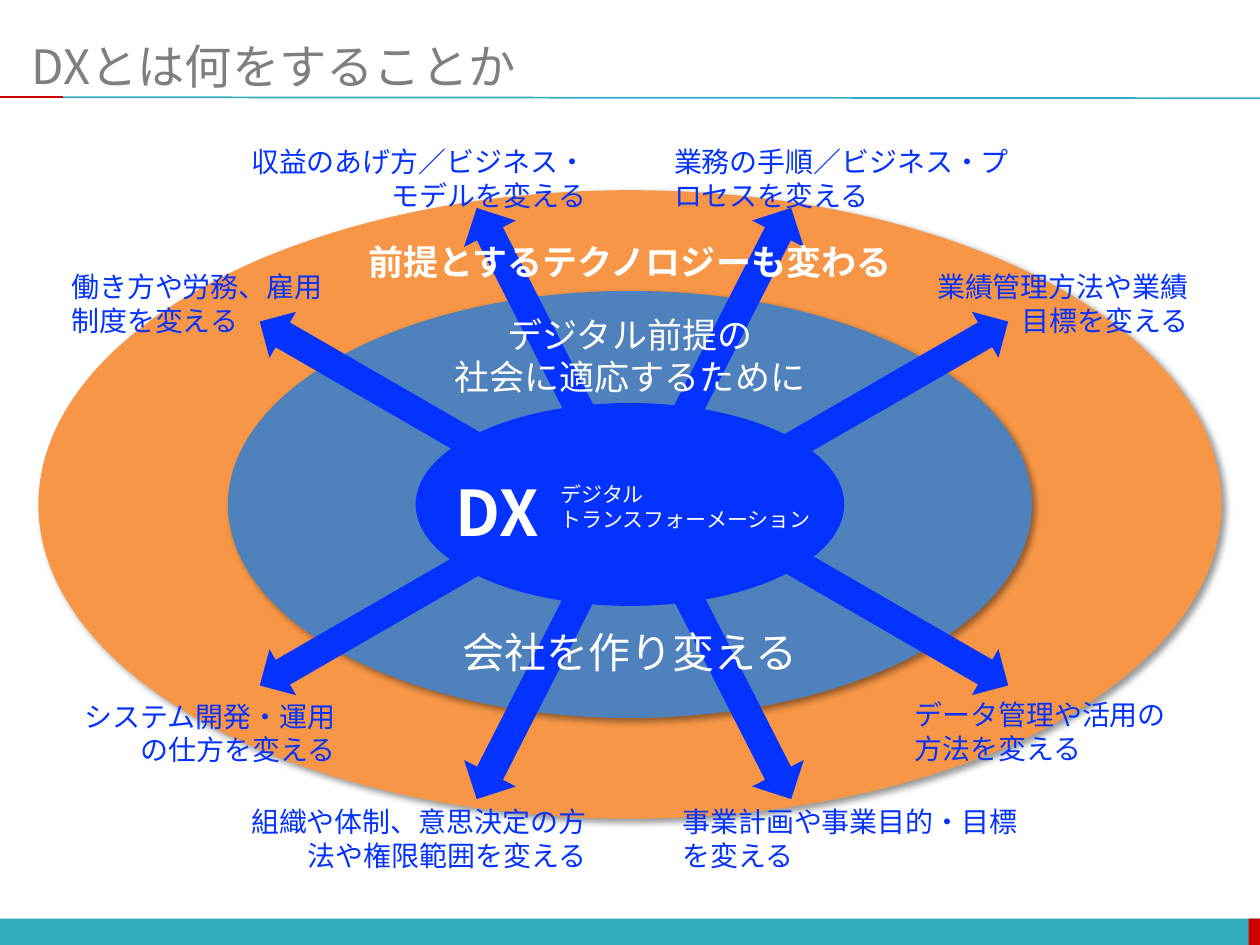
from lxml import etree
from pptx import Presentation
from pptx.dml.color import RGBColor
from pptx.enum.shapes import MSO_CONNECTOR, MSO_SHAPE
from pptx.enum.text import MSO_ANCHOR, MSO_AUTO_SIZE, PP_ALIGN
from pptx.oxml.ns import qn
from pptx.util import Cm, Pt

RECTANGLE, OVAL, UP_ARROW = MSO_SHAPE.RECTANGLE, MSO_SHAPE.OVAL, MSO_SHAPE.UP_ARROW
STRAIGHT = MSO_CONNECTOR.STRAIGHT
LEFT, CENTER, RIGHT = PP_ALIGN.LEFT, PP_ALIGN.CENTER, PP_ALIGN.RIGHT
MIDDLE = MSO_ANCHOR.MIDDLE
FIT_SHAPE, NO_FIT = MSO_AUTO_SIZE.SHAPE_TO_FIT_TEXT, MSO_AUTO_SIZE.NONE
TEAL, RED, GRAY, WHITE = "33ACBD", "CC0000", "7F7F7F", "FFFFFF"
ORANGE, STEEL, BLUE = "F79646", "4F81BD", "0432FF"
FONT = "Noto Sans CJK JP"
WIDTH, HEIGHT = 25.4, 19.05


def color(value):
    return RGBColor.from_string(value)


class SlideBuilder:
    def __init__(self, slide):
        self.slide = slide

    def fill_frame(self, frame, lines, size, fill, align=LEFT, bold=False):
        for index, line in enumerate(lines):
            paragraph = frame.paragraphs[0] if index == 0 else frame.add_paragraph()
            paragraph.alignment = align
            run = paragraph.add_run()
            run.text = line
            run.font.size = Pt(size)
            run.font.bold = bold
            run.font.color.rgb = color(fill)
            run.font.name = FONT
            etree.SubElement(run.font._element, qn("a:ea"), typeface=FONT)

    def title(self, text, left, top, width, height):
        shape = self.slide.shapes.title
        shape.left, shape.top = Cm(left), Cm(top)
        shape.width, shape.height = Cm(width), Cm(height)
        frame = shape.text_frame
        frame.margin_left = frame.margin_right = 0
        frame.vertical_anchor = MIDDLE
        frame.auto_size = NO_FIT
        self.fill_frame(frame, [text], 27, GRAY)

    def text(self, lines, left, top, width, height, size, fill,
             align=LEFT, bold=False, wrap=False):
        box = self.slide.shapes.add_textbox(Cm(left), Cm(top), Cm(width), Cm(height))
        box.text_frame.word_wrap = wrap
        box.text_frame.auto_size = FIT_SHAPE
        self.fill_frame(box.text_frame, lines, size, fill, align, bold)

    def shape(self, kind, left, top, width, height, fill):
        shape = self.slide.shapes.add_shape(kind, Cm(left), Cm(top), Cm(width), Cm(height))
        shape.shadow.inherit = False
        shape.fill.solid()
        shape.fill.fore_color.rgb = color(fill)
        shape.line.fill.background()
        return shape

    def ellipse(self, center_x, center_y, width, height, fill, shadow):
        shape = self.shape(OVAL, center_x - width / 2, center_y - height / 2,
                           width, height, fill)
        if shadow:
            effects = shape._element.spPr.find(qn("a:effectLst"))
            outer = etree.SubElement(effects, qn("a:outerShdw"), blurRad=str(Pt(4)),
                                     dist=str(Pt(3)), dir="2700000", algn="tl",
                                     rotWithShape="0")
            black = etree.SubElement(outer, qn("a:srgbClr"), val="000000")
            etree.SubElement(black, qn("a:alpha"), val="40000")

    def arrow(self, center_x, center_y, width, length, angle, shaft):
        shape = self.shape(UP_ARROW, center_x - width / 2, center_y - length / 2,
                           width, length, BLUE)
        shape.adjustments[0] = shaft
        shape.rotation = angle % 360

    def line(self, start_x, start_y, end_x, end_y, fill):
        connector = self.slide.shapes.add_connector(
            STRAIGHT, Cm(start_x), Cm(start_y), Cm(end_x), Cm(end_y))
        connector.line.color.rgb = color(fill)
        connector.line.width = Pt(1)
        etree.SubElement(connector._element.spPr, qn("a:effectLst"))


def main():
    presentation = Presentation()
    presentation.slide_width, presentation.slide_height = Cm(WIDTH), Cm(HEIGHT)
    builder = SlideBuilder(presentation.slides.add_slide(presentation.slide_layouts[5]))

    builder.shape(RECTANGLE, 0, 18.52, WIDTH, 0.55, TEAL)
    builder.shape(RECTANGLE, 25.17, 18.52, 0.23, 0.55, RED)
    builder.line(1.27, 1.96, WIDTH, 1.98, TEAL)
    builder.line(0, 1.96, 1.27, 1.96, RED)
    builder.title("DXとは何をすることか", 0.64, 0.74, 24.13, 1.17)

    for width, height, fill, shadow in [
        (23.85, 12.67, ORANGE, True),
        (16.21, 8.61, STEEL, True),
        (8.64, 4.09, BLUE, False),
    ]:
        builder.ellipse(WIDTH / 2, 10.17, width, height, fill, shadow)

    builder.text(["DX"], 8.94, 9.42, 2.46, 1.8, 36, WHITE, bold=True)
    builder.text(["デジタル", "トランスフォーメーション"],
                 11.05, 9.58, 5.64, 1.27, 12, WHITE)

    wide, narrow = 7.47, 5.82
    for label, left, top, width, align in [
        ("収益のあげ方／ビジネス・モデルを変える", 4.6, 2.79, wide, RIGHT),
        ("業務の手順／ビジネス・プロセスを変える", 13.34, 2.79, wide, LEFT),
        ("働き方や労務、雇用制度を変える", 1.19, 5.31, narrow, LEFT),
        ("組織や体制、意思決定の方法や権限範囲を変える", 4.6, 16.1, wide, RIGHT),
        ("事業計画や事業目的・目標を変える", 13.51, 16.1, wide, LEFT),
        ("システム開発・運用の仕方を変える", 1.19, 13.97, narrow, RIGHT),
        ("データ管理や活用の方法を変える", 18.19, 13.94, narrow, LEFT),
        ("業績管理方法や業績目標を変える", 18.39, 5.31, narrow, RIGHT),
    ]:
        builder.text([label], left, top, width, 1.63, 16, BLUE, align, wrap=True)

    for offset_x, offset_y, width, length, angle, shaft in [
        (2.12, 3.9, 1.17, 4.62, 27, 0.5),
        (5.33, 2.39, 1.07, 5.11, 60, 0.54),
    ]:
        for side in (-1, 1):
            for direction, turn in ((-1, angle), (1, 180 - angle)):
                builder.arrow(12.78 + side * offset_x, 10.15 + direction * offset_y,
                              width, length, side * turn, shaft)

    for lines, top, width, height, size, bold in [
        (["会社を作り変える"], 12.5, 7.34, 1.27, 24, False),
        (["前提とするテクノロジーも変わる"], 4.72, 11.2, 1.12, 20, True),
        (["デジタル前提の", "社会に適応するために"], 6.2, 7.65, 1.96, 20, False),
    ]:
        builder.text(lines, (WIDTH - width) / 2, top, width, height, size, WHITE,
                     CENTER, bold)

    presentation.save("out.pptx")


if __name__ == "__main__":
    main()
